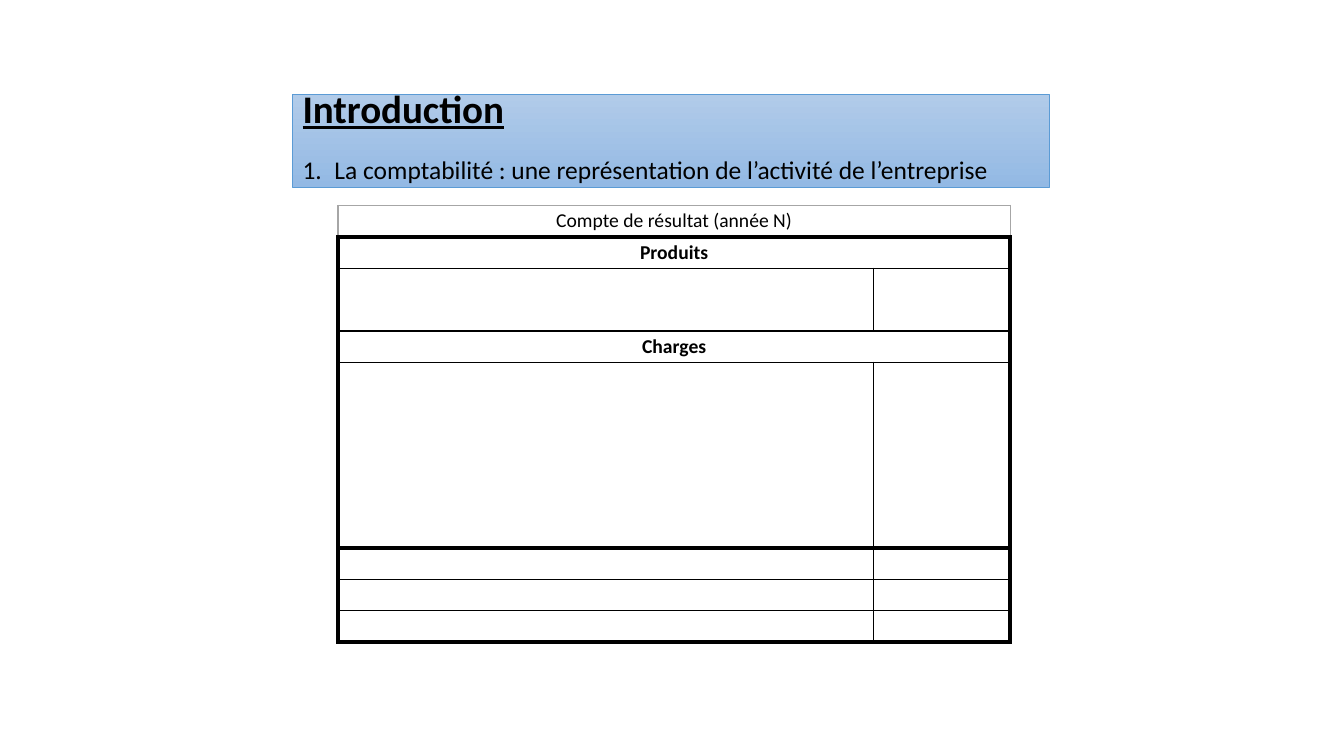
from lxml.etree import SubElement
from pptx import Presentation
from pptx.dml.color import RGBColor
from pptx.enum.text import MSO_ANCHOR, MSO_AUTO_SIZE, PP_ALIGN
from pptx.oxml.ns import qn
from pptx.util import Cm, Pt

FONT = "Calibri"
BLACK, GREY, WHITE = "000000", "A6A6A6", "FFFFFF"
HEADING = "Introduction"
# text, size in points
SECTION = [
    ("1.", 18.2),
    (" ", 39.6),
    ("La comptabilité : une représentation de l’activité de l’entreprise", 18.2),
]
# row: (text, bold)
BANDS = {
    0: ("Compte de résultat (année N)", False),
    1: ("Produits", True),
    4: ("Charges", True),
}
ROW_HEIGHTS = [0.79] * 7 + [3.1] + [0.79] * 3
COLUMN_WIDTHS = [13.5, 3.44]
THICK, MEDIUM, THIN = (BLACK, 3), (BLACK, 1.5), (BLACK, 1)
FAINT = (GREY, 1)
# Rule above each row, then the one below the last row
HORIZONTAL_RULES = [FAINT, THICK, THIN, None, MEDIUM, THIN, None, None,
                    THICK, THIN, THIN, THICK]
VERTICAL_RULES = [THICK, THIN, THICK]


def color(value):
    return RGBColor.from_string(value)


def style_run(run, size, bold=False, underline=False):
    run.font.name = FONT
    run.font.size = Pt(size)
    run.font.bold = bold
    run.font.underline = underline
    run.font.color.rgb = color(BLACK)


def place(part, left, top, width, height):
    part.left, part.top = Cm(left), Cm(top)
    part.width, part.height = Cm(width), Cm(height)


def set_border(properties, side, rule):
    """Draw one cell edge (L, R, T or B); no rule leaves it invisible."""
    line = SubElement(properties, qn(f"a:ln{side}"))
    if rule is None:
        SubElement(line, qn("a:noFill"))
        return
    shade, width = rule
    line.set("w", str(Pt(width)))
    fill = SubElement(line, qn("a:solidFill"))
    SubElement(fill, qn("a:srgbClr"), val=shade)


def fill_title(title):
    place(title, 7.37, 2.38, 19.07, 2.34)
    title.fill.gradient()
    title.fill.gradient_angle = 270
    for stop, shade in zip(title.fill.gradient_stops, ("B1CBE9", "93B9E4")):
        stop.color.rgb = color(shade)
    title.line.color.rgb = color("5B9BD5")
    title.line.width = Pt(0.5)
    frame = title.text_frame
    frame.auto_size = MSO_AUTO_SIZE.NONE
    frame.word_wrap = True
    frame.vertical_anchor = MSO_ANCHOR.MIDDLE
    paragraph = frame.paragraphs[0]
    paragraph.alignment = PP_ALIGN.LEFT
    paragraph.line_spacing = 0.9
    heading = paragraph.add_run()
    heading.text = HEADING
    style_run(heading, 27.9, bold=True, underline=True)
    paragraph.add_line_break()
    line_break = paragraph._p.find(qn("a:br"))
    SubElement(line_break, qn("a:rPr"), sz="2790")
    for text, size in SECTION:
        run = paragraph.add_run()
        run.text = text
        style_run(run, size)


def fill_cell(cell, row, column):
    cell.margin_left = cell.margin_right = Cm(0.18)
    cell.margin_top = cell.margin_bottom = Cm(0.09)
    paragraph = cell.text_frame.paragraphs[0]
    if row in BANDS and column == 0:
        text, bold = BANDS[row]
        paragraph.text = text
        paragraph.alignment = PP_ALIGN.CENTER
        style_run(paragraph.runs[0], 14, bold)
        if bold:
            cell.vertical_anchor = MSO_ANCHOR.MIDDLE
    else:
        SubElement(paragraph._p, qn("a:endParaRPr"), sz="1200")

    left, right = VERTICAL_RULES[column:column + 2]
    if row == 0:
        left = right = FAINT
    elif row in BANDS:
        left = right = THICK
    edges = {"L": left, "R": right,
             "T": HORIZONTAL_RULES[row], "B": HORIZONTAL_RULES[row + 1]}
    properties = cell._tc.get_or_add_tcPr()
    for side, rule in edges.items():
        set_border(properties, side, rule)
    cell.fill.solid()
    cell.fill.fore_color.rgb = color(WHITE)


def add_income_statement(slide):
    frame = slide.shapes.add_table(
        len(ROW_HEIGHTS), len(COLUMN_WIDTHS), Cm(8.52), Cm(5.18),
        Cm(sum(COLUMN_WIDTHS)), Cm(sum(ROW_HEIGHTS)))
    statement = frame.table
    statement.first_row = statement.horz_banding = False
    for column, width in enumerate(COLUMN_WIDTHS):
        statement.columns[column].width = Cm(width)
    for row, height in enumerate(ROW_HEIGHTS):
        statement.rows[row].height = Cm(height)
        if row in BANDS:
            statement.cell(row, 0).merge(statement.cell(row, 1))
        for column in range(len(COLUMN_WIDTHS)):
            fill_cell(statement.cell(row, column), row, column)


def main():
    presentation = Presentation()
    presentation.slide_width, presentation.slide_height = Cm(33.87), Cm(19.05)
    slide = presentation.slides.add_slide(presentation.slide_layouts[5])
    fill_title(slide.shapes.title)
    add_income_statement(slide)
    presentation.save("out.pptx")


if __name__ == "__main__":
    main()
